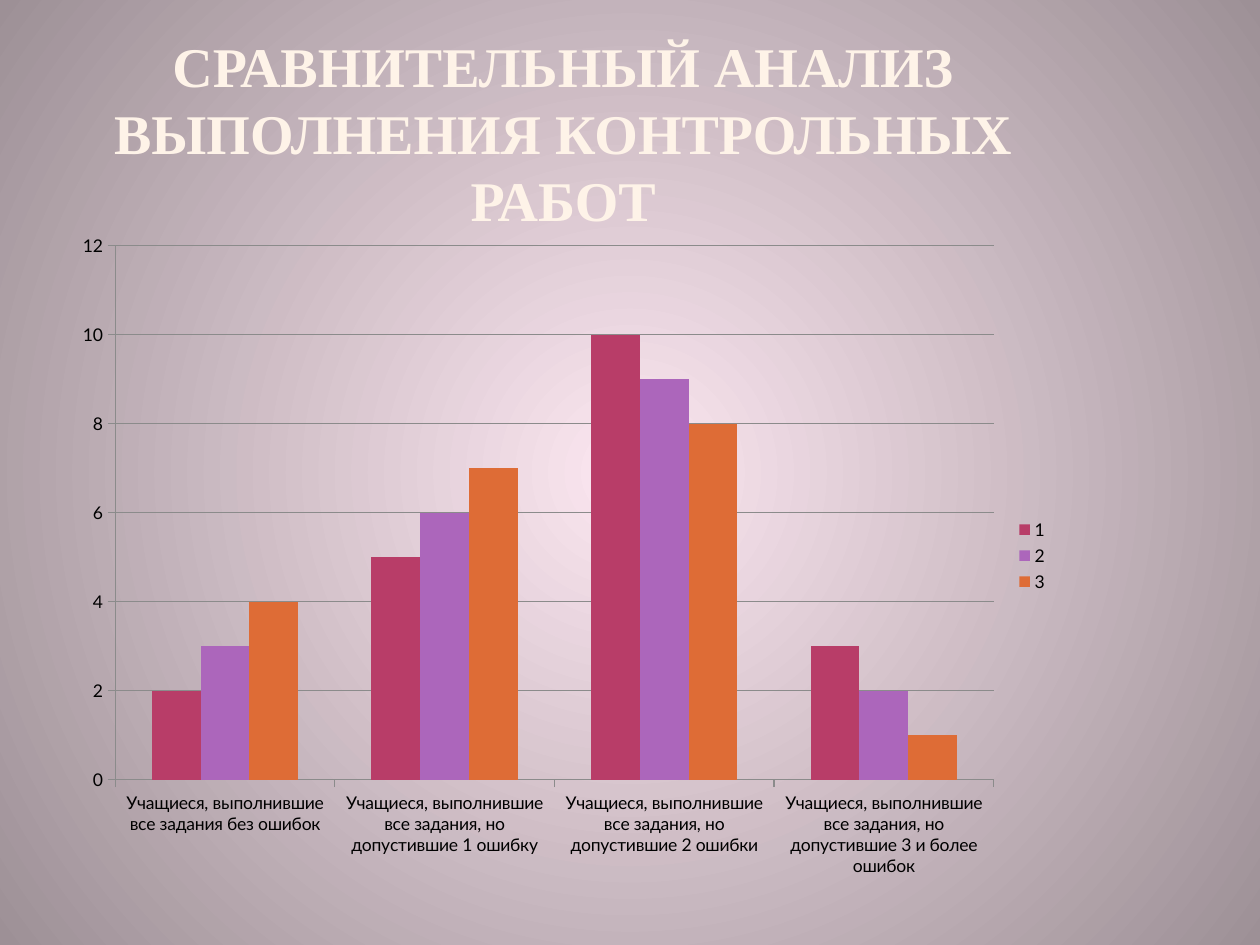
from lxml import etree
from pptx import Presentation
from pptx.chart.data import CategoryChartData
from pptx.dml.color import RGBColor
from pptx.enum.chart import XL_CHART_TYPE, XL_LEGEND_POSITION, XL_TICK_MARK
from pptx.enum.text import MSO_ANCHOR, PP_ALIGN
from pptx.oxml.ns import qn
from pptx.util import Inches, Pt

CLUSTERED = XL_CHART_TYPE.COLUMN_CLUSTERED
RIGHT = XL_LEGEND_POSITION.RIGHT
OUTSIDE = XL_TICK_MARK.OUTSIDE
BOTTOM = MSO_ANCHOR.BOTTOM
CENTER = PP_ALIGN.CENTER

COLORS = {
    "glow": "FCE7F1", "edge": "9D9096", "title": "FEF3E8",
    "text": "000000", "axis": "8B8B8B",
    "1": "B83D68", "2": "AC66BB", "3": "DE6C36",
}
CATEGORIES = [
    "Учащиеся, выполнившие все задания без ошибок",
    "Учащиеся, выполнившие все задания, но допустившие 1 ошибку",
    "Учащиеся, выполнившие все задания, но допустившие 2 ошибки",
    "Учащиеся, выполнившие все задания, но допустившие 3 и более ошибок",
]
RESULTS = {"1": (2, 5, 10, 3), "2": (3, 6, 9, 2), "3": (4, 7, 8, 1)}


def color(name):
    """Return the named colour of the palette."""
    return RGBColor.from_string(COLORS[name])


def set_font(font, name, size, fill, bold=False):
    """Set the face, size, colour and weight of a font."""
    font.name, font.size, font.bold = name, Pt(size), bold
    font.fill.solid()
    font.fill.fore_color.rgb = color(fill)


def add_text(slide, box, text, font, size, fill, bold=False, align=CENTER):
    """Add a wrapped, bottom-anchored text box."""
    tf = slide.shapes.add_textbox(*map(Inches, box)).text_frame
    tf.word_wrap = True
    tf.vertical_anchor = BOTTOM
    tf.margin_left = tf.margin_right = Inches(0.05)
    tf.margin_top = tf.margin_bottom = 0
    p = tf.paragraphs[0]
    p.alignment = align
    r = p.add_run()
    r.text = text
    set_font(r.font, font, size, fill, bold)


def set_background(slide):
    """Fill the background with a gradient from the centre outwards."""
    fill = slide.background.fill
    fill.gradient()
    for stop, name, position in zip(fill.gradient_stops, ("glow", "edge"), (0, 1)):
        stop.color.rgb = color(name)
        stop.position = position
    grad = slide.background._cSld.find(".//" + qn("a:gradFill"))
    grad.remove(grad.find(qn("a:lin")))
    path = etree.SubElement(grad, qn("a:path"), {"path": "circle"})
    etree.SubElement(path, qn("a:fillToRect"), dict.fromkeys("ltrb", "50000"))


def style_line(line):
    """Give a chart line the axis colour and width."""
    line.color.rgb = color("axis")
    line.width = Pt(0.75)


def add_results_chart(slide, box):
    """Add the clustered columns comparing the three tests."""
    data = CategoryChartData()
    data.categories = CATEGORIES
    for name, values in RESULTS.items():
        data.add_series(name, values)
    chart = slide.shapes.add_chart(CLUSTERED, *map(Inches, box), data).chart
    set_font(chart.font, "Lato", 10, "text")
    chart.has_title = False
    chart.has_legend = True
    chart.legend.position = RIGHT
    chart.legend.include_in_layout = False
    for axis in (chart.category_axis, chart.value_axis):
        axis.major_tick_mark = OUTSIDE
        style_line(axis.format.line)
    chart.value_axis.has_major_gridlines = True
    style_line(chart.value_axis.major_gridlines.format.line)
    plot = chart.plots[0]
    plot.gap_width = 150
    plot.overlap = 0
    plot.vary_by_categories = False
    for series in plot.series:
        series.format.fill.solid()
        series.format.fill.fore_color.rgb = color(series.name)


def main():
    """Build and save the slide."""
    prs = Presentation()
    prs.slide_width, prs.slide_height = Inches(10), Inches(7.5)
    slide = prs.slides.add_slide(prs.slide_layouts[6])
    set_background(slide)
    add_text(slide, (0.51, 0.6, 7.92, 1.25),
             "СРАВНИТЕЛЬНЫЙ АНАЛИЗ ВЫПОЛНЕНИЯ КОНТРОЛЬНЫХ РАБОТ",
             font="Times New Roman", size=32, fill="title", bold=True)
    add_results_chart(slide, (0.5, 1.76, 7.92, 5.3))
    prs.save("out.pptx")


if __name__ == "__main__":
    main()
